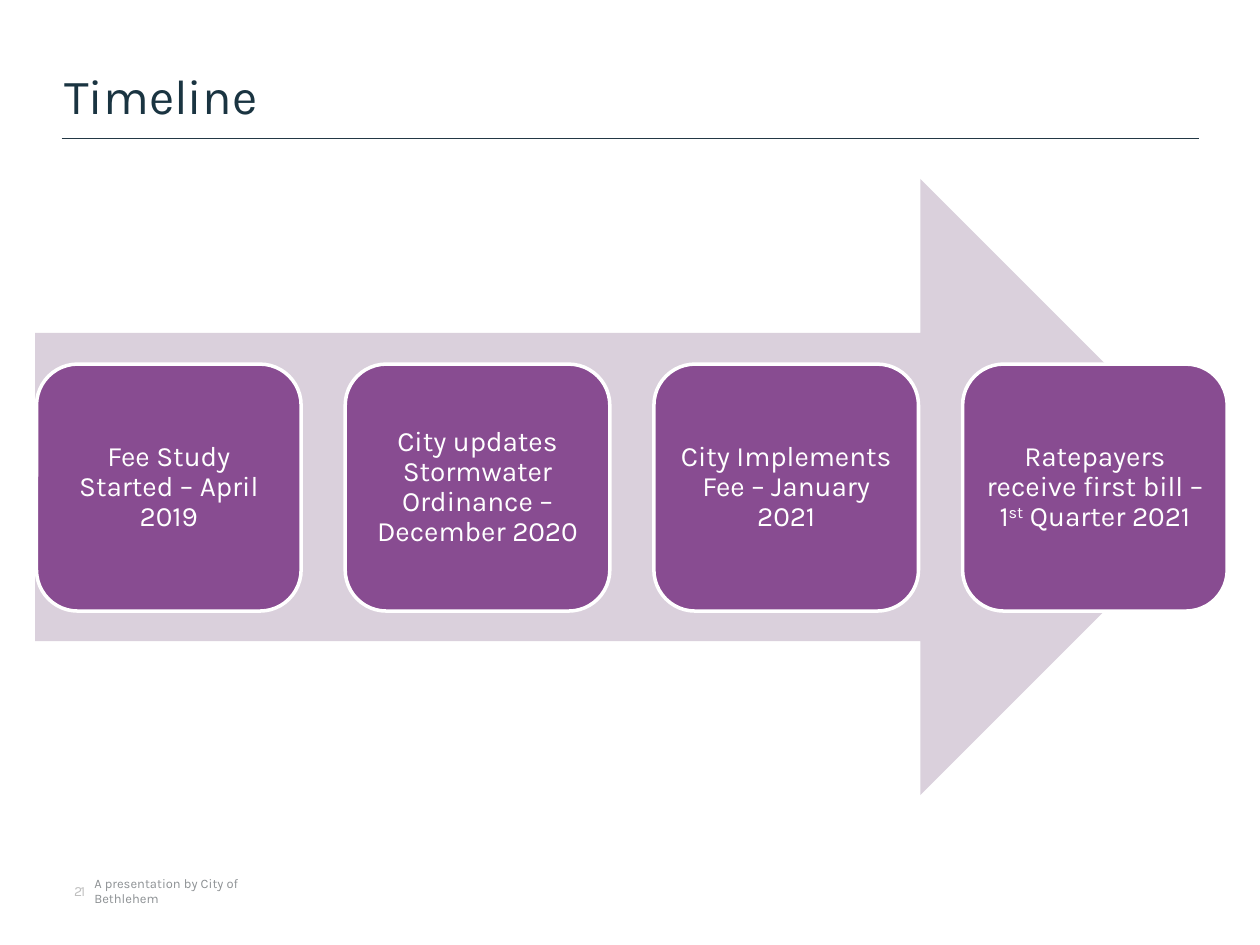
import pptx
import pptx.dml.color
import pptx.enum.shapes
import pptx.enum.text
import pptx.oxml.ns
import pptx.util
from lxml import etree

Inches = pptx.util.Inches
Pt = pptx.util.Pt
RGBColor = pptx.dml.color.RGBColor
Shape = pptx.enum.shapes.MSO_SHAPE
Align = pptx.enum.text.PP_ALIGN
Anchor = pptx.enum.text.MSO_ANCHOR

NAVY = RGBColor(0x1A, 0x34, 0x41)
RULE = RGBColor(0x23, 0x38, 0x45)
PURPLE = RGBColor(0x88, 0x4C, 0x91)
LILAC = RGBColor(0xDA, 0xD0, 0xDC)
WHITE = RGBColor(0xFF, 0xFF, 0xFF)
GREY = RGBColor(0x8D, 0x91, 0x94)
PALE_GREY = RGBColor(0xBF, 0xBF, 0xBF)

# Each step is a list of (text, run attributes)
STEPS = [
    [("Fee Study Started – April 2019", {})],
    [("City updates Stormwater Ordinance – December 2020", {})],
    [("City Implements Fee – January 2021", {})],
    [("Ratepayers receive first bill – 1", {}),
     ("st", {"baseline": "30000"}),
     (" Quarter 2021", {})],
]


class SlideBuilder:
    font_name = "Karla"

    def __init__(self, page):
        self.page = page

    def fill_text(self, box, spans, size, color, anchor, inset=None, **layout):
        frame = box.text_frame
        frame.word_wrap = True
        frame.auto_size = pptx.enum.text.MSO_AUTO_SIZE.NONE
        frame.vertical_anchor = anchor
        if inset is not None:
            for side in ("left", "top", "right", "bottom"):
                setattr(frame, f"margin_{side}", Inches(inset))
        para = frame.paragraphs[0]
        for name, value in layout.items():
            setattr(para, name, value)
        style = {"name": self.font_name, "size": Pt(size)}
        for text, attributes in spans:
            span = para.add_run()
            span.text = text
            for name, value in style.items():
                setattr(span.font, name, value)
            span.font.color.rgb = color
            for name, value in attributes.items():
                span._r.get_or_add_rPr().set(name, value)

    def title(self, text, left, top, width, height):
        box = self.page.shapes.title
        place = {"left": left, "top": top, "width": width, "height": height}
        for name, value in place.items():
            setattr(box, name, Inches(value))
        self.fill_text(box, [(text, {})], 28, NAVY, Anchor.BOTTOM, 0,
                       alignment=Align.LEFT)

    def rule(self, left, right, top):
        line = self.page.shapes.add_connector(
            pptx.enum.shapes.MSO_CONNECTOR.STRAIGHT,
            Inches(left), Inches(top), Inches(right), Inches(top))
        line.line.color.rgb = RULE
        line.line.width = Pt(0.5)
        etree.SubElement(line._element.spPr, pptx.oxml.ns.qn("a:effectLst"))

    def shape(self, kind, left, top, width, height, fill, outline=None):
        box = self.page.shapes.add_shape(
            kind, Inches(left), Inches(top), Inches(width), Inches(height))
        box.shadow.inherit = False
        box.fill.solid()
        box.fill.fore_color.rgb = fill
        if outline is None:
            box.line.fill.background()
        else:
            box.line.color.rgb = outline
            box.line.width = Pt(2)
        return box

    def step(self, spans, left, top, width, height):
        box = self.shape(Shape.ROUNDED_RECTANGLE, left, top, width, height,
                         PURPLE, WHITE)
        self.fill_text(box, spans, 16, WHITE, Anchor.MIDDLE, 0.07,
                       alignment=Align.CENTER, line_spacing=0.9)

    def footer(self, text, left, width, size, color, attributes):
        box = self.page.shapes.add_textbox(
            Inches(left), Inches(6.93), Inches(width), Inches(0.28))
        self.fill_text(box, [(text, attributes)], size, color, Anchor.MIDDLE,
                       space_after=Pt(6))


def main():
    deck = pptx.Presentation()
    deck.slide_width = Inches(10)
    deck.slide_height = Inches(7.5)
    title_only = deck.slide_layouts[5]
    builder = SlideBuilder(deck.slides.add_slide(title_only))

    # Heading
    builder.rule(0.49, 9.52, 1.1)
    builder.title("Timeline", 0.51, 0.32, 8.98, 0.67)

    # Footer and page number
    builder.footer("A presentation by City of Bethlehem", 0.65, 1.87, 7.4,
                   GREY, {})
    builder.footer("21", 0.49, 0.56, 8, PALE_GREY, {"spc": "-100"})

    # Timeline arrow with evenly spaced steps
    builder.shape(Shape.RIGHT_ARROW, 0.28, 1.42, 9.47, 4.89, LILAC)
    for index, spans in enumerate(STEPS):
        builder.step(spans, 0.29 + 2.45 * index, 2.89, 2.1, 1.96)

    deck.save("out.pptx")


if __name__ == "__main__":
    main()
